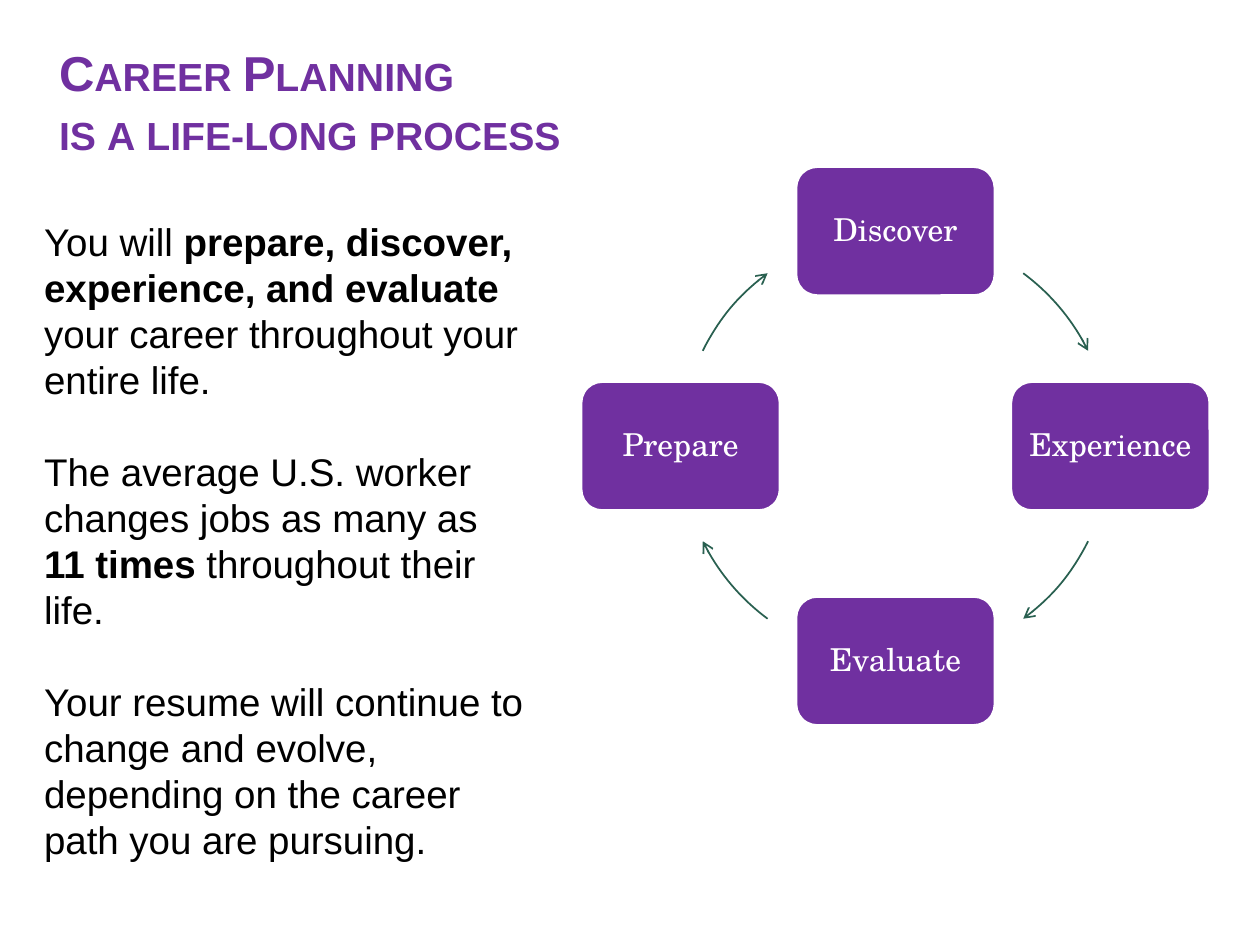
from dataclasses import dataclass

from lxml.etree import SubElement
from pptx import Presentation
from pptx.dml.color import RGBColor
from pptx.enum.shapes import MSO_SHAPE
from pptx.enum.text import MSO_ANCHOR, MSO_AUTO_SIZE, PP_ALIGN
from pptx.oxml.ns import qn
from pptx.slide import Slide
from pptx.util import Pt

COLORS = {"purple": "7030A0", "green": "296050", "white": "FFFFFF", "black": "000000"}
MID_X, MID_Y, RADIUS = 511.7, 254.9, 122.8
BOX_W, BOX_H = 114.2, 74.2
SWEEP = 27.2


@dataclass
class Stage:
    name: str
    dx: int
    dy: int
    start: float


STAGES = [
    Stage("Discover", 0, -1, 306.5),
    Stage("Experience", 1, 0, 26.3),
    Stage("Evaluate", 0, 1, 126.5),
    Stage("Prepare", -1, 0, 206.3),
]

BODY = [
    [
        ("You will ", False),
        ("prepare, discover, experience, and evaluate ", True),
        ("your career throughout your entire life.", False),
    ],
    [
        ("The average U.S. worker changes jobs as many as ", False),
        ("11 times ", True),
        ("throughout their life.", False),
    ],
    [
        ("Your resume will continue to change and evolve, "
         "depending on the career path you are pursuing.", False),
    ],
]


def color(name: str) -> RGBColor:
    return RGBColor.from_string(COLORS[name])


def place(shape, left: float, top: float, width: float, height: float) -> None:
    shape.left, shape.top = Pt(left), Pt(top)
    shape.width, shape.height = Pt(width), Pt(height)


def style(font, name: str, size: float, hue: str) -> None:
    font.name, font.size = name, Pt(size)
    font.color.rgb = color(hue)


def draw_title(slide: Slide) -> None:
    title = slide.shapes.title
    place(title, 26.6, 19.4, 353.5, 75.6)
    frame = title.text_frame
    frame.text = "Career Planning\vis a life-long process"
    frame.auto_size = MSO_AUTO_SIZE.NONE
    frame.vertical_anchor = MSO_ANCHOR.BOTTOM
    para = frame.paragraphs[0]
    para.alignment = PP_ALIGN.LEFT
    para.line_spacing = Pt(33.7)
    for run in para.runs:
        style(run.font, "Arial", 28, "purple")
        run.font.bold = True
        run.font._element.set("cap", "small")


def draw_body(slide: Slide) -> None:
    body = slide.placeholders[1]
    place(body, 18, 119.5, 289.4, 445.7)
    frame = body.text_frame
    frame.auto_size = MSO_AUTO_SIZE.NONE
    frame.margin_top = Pt(5)
    for i, parts in enumerate(BODY):
        para = frame.add_paragraph() if i else frame.paragraphs[0]
        props = para._p.get_or_add_pPr()
        props.set("marL", "0")
        props.set("indent", "0")
        SubElement(props, qn("a:buNone"))
        para.line_spacing = Pt(26.3)
        para.space_before = Pt(26.3 if i else 0)
        for text, bold in parts:
            run = para.add_run()
            run.text = text
            style(run.font, "Arial", 22, "black")
            run.font.bold = bold


def draw_box(slide: Slide, stage: Stage) -> None:
    left = MID_X + stage.dx * RADIUS - BOX_W / 2
    top = MID_Y + stage.dy * RADIUS - BOX_H / 2
    box = slide.shapes.add_shape(
        MSO_SHAPE.ROUNDED_RECTANGLE, Pt(left), Pt(top), Pt(BOX_W), Pt(BOX_H))
    box.shadow.inherit = False
    box.fill.solid()
    box.fill.fore_color.rgb = color("purple")
    box.line.color.rgb = color("white")
    box.line.width = Pt(2)
    frame = box.text_frame
    frame.text = stage.name
    frame.word_wrap = True
    frame.margin_left = frame.margin_right = Pt(5)
    frame.vertical_anchor = MSO_ANCHOR.MIDDLE
    para = frame.paragraphs[0]
    para.alignment = PP_ALIGN.CENTER
    para.line_spacing = 0.9
    style(para.runs[0].font, "TeX Gyre Schola", 18, "white")


def draw_arc(slide: Slide, stage: Stage) -> None:
    arc = slide.shapes.add_shape(
        MSO_SHAPE.ARC, Pt(MID_X - RADIUS), Pt(MID_Y - RADIUS),
        Pt(2 * RADIUS), Pt(2 * RADIUS))
    arc.adjustments[0] = stage.start * 0.6
    arc.adjustments[1] = (stage.start + SWEEP) * 0.6
    arc.shadow.inherit = False
    arc.fill.background()
    arc.line.color.rgb = color("green")
    arc.line.width = Pt(1)
    SubElement(arc.line._get_or_add_ln(), qn("a:tailEnd"), type="arrow")


def main() -> None:
    deck = Presentation()
    deck.slide_width, deck.slide_height = Pt(720), Pt(540)
    slide = deck.slides.add_slide(deck.slide_layouts[1])
    draw_title(slide)
    for stage in STAGES:
        draw_box(slide, stage)
        draw_arc(slide, stage)
    draw_body(slide)
    deck.save("out.pptx")


if __name__ == "__main__":
    main()
